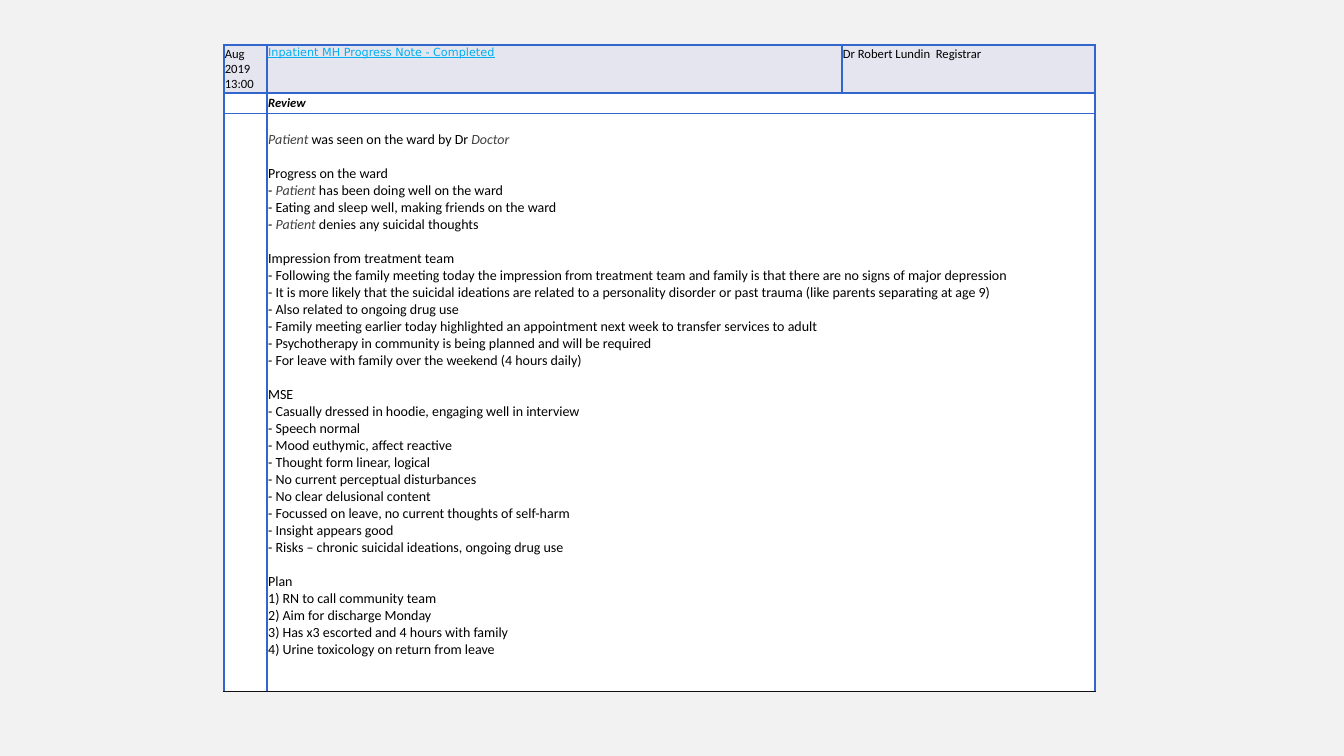
from lxml import etree
from pptx import Presentation
from pptx.dml.color import RGBColor
from pptx.enum.text import MSO_ANCHOR
from pptx.oxml.ns import qn
from pptx.util import Inches, Pt

BACKDROP = RGBColor(0xF2, 0xF2, 0xF2)
HEADER = RGBColor(0xE5, 0xE5, 0xF0)
WHITE = RGBColor(0xFF, 0xFF, 0xFF)
BLACK = RGBColor(0x00, 0x00, 0x00)
GREY = RGBColor(0x40, 0x40, 0x40)
CYAN = RGBColor(0x00, 0xB0, 0xF0)
BLUE = RGBColor(0x33, 0x66, 0xCC)
DARK = RGBColor(0x11, 0x11, 0x11)

SECTIONS = [
    ["*Patient* was seen on the ward by Dr *Doctor*"],
    ["Progress on the ward",
     "- *Patient* has been doing well on the ward",
     "- Eating and sleep well, making friends on the ward",
     "- *Patient* denies any suicidal thoughts"],
    ["Impression from treatment team",
     "- Following the family meeting today the impression from treatment team and family is that there are no signs of major depression",
     "- It is more likely that the suicidal ideations are related to a personality disorder or past trauma (like parents separating at age 9)",
     "- Also related to ongoing drug use",
     "- Family meeting earlier today highlighted an appointment next week to transfer services to adult",
     "- Psychotherapy in community is being planned and will be required",
     "- For leave with family over the weekend (4 hours daily)"],
    ["MSE",
     "- Casually dressed in hoodie, engaging well in interview",
     "- Speech normal",
     "- Mood euthymic, affect reactive",
     "- Thought form linear, logical",
     "- No current perceptual disturbances",
     "- No clear delusional content",
     "- Focussed on leave, no current thoughts of self-harm",
     "- Insight appears good",
     "- Risks – chronic suicidal ideations, ongoing drug use"],
    ["Plan",
     "1) RN to call community team",
     "2) Aim for discharge Monday",
     "3) Has x3 escorted and 4 hours with family",
     "4) Urine toxicology on return from leave"],
]


def add_run(p, text, size=9, color=BLACK, **formats):
    r = p.add_run()
    r.text = text
    r.font.size = Pt(size)
    r.font.color.rgb = color
    for name, value in {"name": "Calibri", **formats}.items():
        setattr(r.font, name, value)


def add_border(cell, side, color, width):
    ln = etree.SubElement(cell._tc.get_or_add_tcPr(), qn(f"a:ln{side}"), w=str(Pt(width)))
    fill = etree.SubElement(ln, qn("a:solidFill"))
    etree.SubElement(fill, qn("a:srgbClr"), val=str(color))


prs = Presentation()
prs.slide_width = Inches(13.33)
prs.slide_height = Inches(7.5)
s = prs.slides.add_slide(prs.slide_layouts[6])
s.background.fill.solid()
s.background.fill.fore_color.rgb = BACKDROP

table = s.shapes.add_table(3, 3, Inches(2.22), Inches(0.45), Inches(8.64), Inches(6.4)).table
table.first_row = False
table.horz_banding = False
for column, width in zip(table.columns, (0.43, 5.7, 2.51)):
    column.width = Inches(width)
for row, height in zip(table.rows, (0.47, 0.2, 5.73)):
    row.height = Inches(height)

for i, row in enumerate(table.rows):
    for cell in row.cells:
        for side in ("left", "right", "top", "bottom"):
            setattr(cell, f"margin_{side}", Inches(0.01))
        for side in "LRT":
            add_border(cell, side, BLUE, 1.5)
        if i == 2:
            add_border(cell, "B", DARK, 0.75)
        else:
            add_border(cell, "B", BLUE, 1.5)
        cell.fill.solid()
        cell.fill.fore_color.rgb = HEADER if i == 0 else WHITE

for i in (1, 2):
    table.cell(i, 1).merge(table.cell(i, 2))
    for j in (0, 2):
        p = table.cell(i, j).text_frame.paragraphs[0]
        etree.SubElement(p._p, qn("a:endParaRPr"), sz="900")

date, title, author = [cell.text_frame.paragraphs[0] for cell in table.rows[0].cells]
add_run(date, "Aug 2019 13:00")
add_run(title, "Inpatient MH Progress Note - Completed", 8, CYAN, name="DejaVu Sans", underline=True)
add_run(author, "Dr Robert Lundin  Registrar")

review = table.cell(1, 1)
review.vertical_anchor = MSO_ANCHOR.MIDDLE
add_run(review.text_frame.paragraphs[0], "Review", bold=True, italic=True)

note = table.cell(2, 1)
note.margin_top = Inches(0.18)
tf = note.text_frame
p = tf.paragraphs[0]
for i, section in enumerate(SECTIONS):
    for j, line in enumerate(section):
        if i or j:
            p = tf.add_paragraph()
        if i and j == 0:
            p.space_before = Pt(12.2)
        for k, part in enumerate(line.split("*")):
            if part:
                italic = k % 2 == 1
                add_run(p, part, 10, GREY if italic else BLACK, italic=italic)

prs.save("out.pptx")
